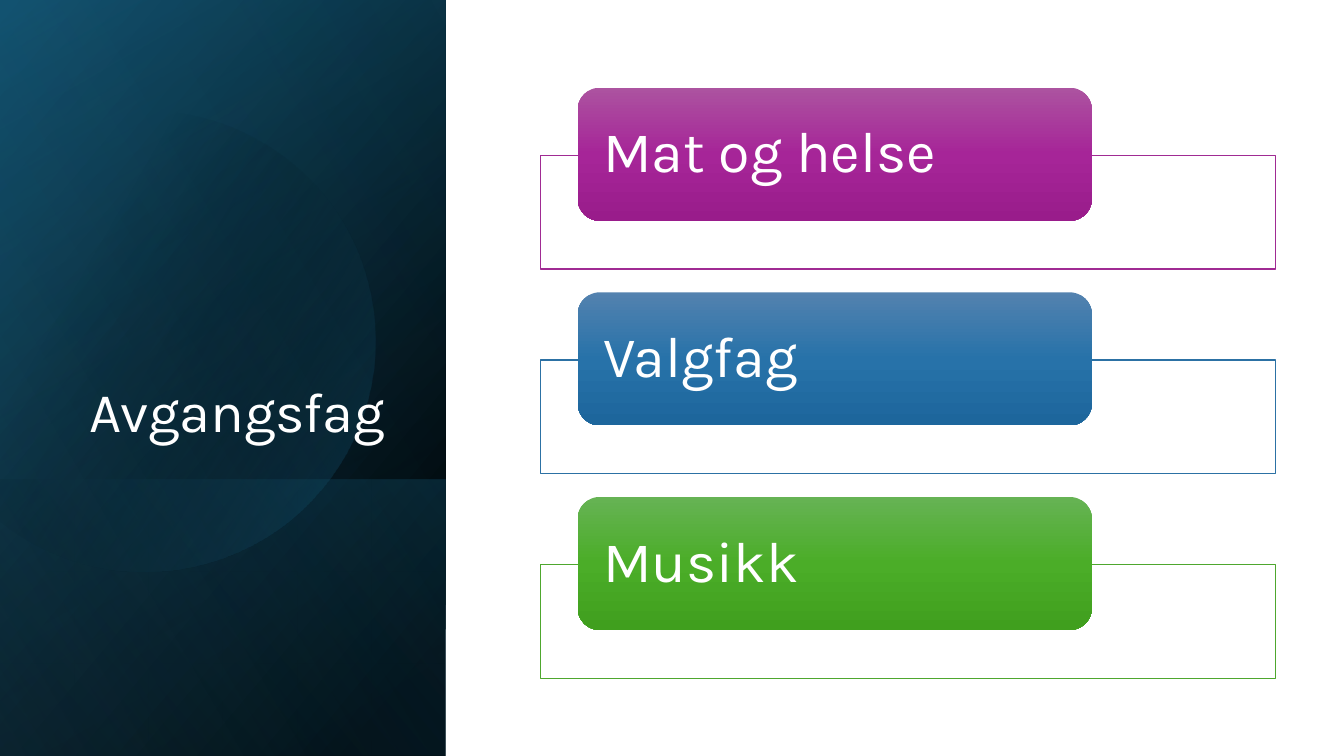
from dataclasses import dataclass

import pptx
import pptx.dml.color
import pptx.enum.shapes
import pptx.enum.text
import pptx.oxml
import pptx.oxml.ns
import pptx.util
from pptx.util import Inches

SHAPE = pptx.enum.shapes.MSO_SHAPE
ALIGN = pptx.enum.text.PP_ALIGN
ANCHOR = pptx.enum.text.MSO_ANCHOR
qn = pptx.oxml.ns.qn


@dataclass(frozen=True)
class Theme:
    font: str = "Karla"
    title_size: int = 40
    card_size: int = 41
    white: str = "FFFFFF"
    black: str = "000000"
    teal: str = "156082"
    deep_teal: str = "104862"
    sky: str = "46B1E1"


@dataclass(frozen=True)
class Stop:
    pos: int
    color: str
    alpha: int = 100


@dataclass(frozen=True)
class Panel:
    top: float
    height: float
    angle: int
    stops: tuple[Stop, ...]


@dataclass(frozen=True)
class Subject:
    name: str
    line: str
    shades: tuple[str, str, str]


THEME = Theme()
SLIDE_W, SLIDE_H, PANEL_W = 13.33, 7.5, 4.42
FRAME_TOP, CARD_TOP, PITCH = 1.54, 0.87, 2.03

BACK_PANELS = (
    Panel(0, SLIDE_H, 50, (Stop(8, THEME.black), Stop(100, THEME.deep_teal))),
    Panel(0, SLIDE_H, 30, (Stop(0, THEME.black, 0), Stop(99, THEME.teal, 46))),
    Panel(4.76, 2.74, 130, (Stop(2, THEME.teal, 29), Stop(100, THEME.black, 30))),
)
GLOW_PANEL = Panel(0, SLIDE_H, 120, (Stop(0, THEME.black, 0), Stop(99, THEME.sky, 11)))
DISC_STOPS = (Stop(29, THEME.black, 0), Stop(100, THEME.teal, 43))

# Each disc segment is a line end (one point) or a curve (three points)
DISC_START = (1.49, 1.1)
DISC_SEGMENTS = (
    ((2.46, 1.12), (3.35, 1.77), (3.63, 2.75)),
    ((3.98, 3.97), (3.28, 5.23), (2.07, 5.58)),
    ((1.31, 5.8), (0.53, 5.61), (-0.03, 5.14)),
    ((-0.15, 5.03),),
    ((-0.15, 1.75),),
    ((0, 1.61),),
    ((0.23, 1.42), (0.5, 1.28), (0.8, 1.19)),
    ((1.03, 1.13), (1.26, 1.1), (1.49, 1.1)),
)

SUBJECTS = (
    Subject("Mat og helse", "A02B93", ("AC53A0", "A62598", "991C8B")),
    Subject("Valgfag", "2C71A4", ("5382AF", "2772A9", "1D669C")),
    Subject("Musikk", "4EA72E", ("66B354", "4BAD28", "409F1E")),
)


def rgb(color: str) -> pptx.dml.color.RGBColor:
    return pptx.dml.color.RGBColor.from_string(color)


def set_gradient(sp, stops: tuple[Stop, ...], angle: int) -> None:
    """Fill with a linear gradient, angle clockwise, and no outline."""
    sp.shadow.inherit = False
    sp.line.fill.background()
    sp.fill.gradient()
    grad = sp._element.spPr.find(qn("a:gradFill"))
    marks = "".join(
        f'<a:gs pos="{s.pos * 1000}"><a:srgbClr val="{s.color}">'
        f'<a:alpha val="{s.alpha * 1000}"/></a:srgbClr></a:gs>'
        for s in stops
    )
    new = pptx.oxml.parse_xml(
        f'<a:gradFill {pptx.oxml.ns.nsdecls("a")} rotWithShape="1">'
        f'<a:gsLst>{marks}</a:gsLst>'
        f'<a:lin ang="{angle * 60000}" scaled="0"/></a:gradFill>'
    )
    grad.getparent().replace(grad, new)


def set_text(sp, text: str, size: int, align, anchor, left: float, right: float,
             margin: float) -> None:
    tf = sp.text_frame
    tf.word_wrap = True
    tf.vertical_anchor = anchor
    tf.margin_left, tf.margin_right = Inches(left), Inches(right)
    tf.margin_top = tf.margin_bottom = Inches(margin)
    p = tf.paragraphs[0]
    p.text = text
    p.alignment = align
    p.line_spacing = 0.9
    p.font.name = THEME.font
    p.font.size = pptx.util.Pt(size)
    p.font.color.rgb = rgb(THEME.white)


def add_panel(shapes, panel: Panel) -> None:
    """Add a mirrored quarter-turned rectangle at the left edge of the slide."""
    left = (PANEL_W - panel.height) / 2
    top = panel.top + (panel.height - PANEL_W) / 2
    sp = shapes.add_shape(SHAPE.RECTANGLE, Inches(left), Inches(top),
                          Inches(panel.height), Inches(PANEL_W))
    sp.rotation = 90
    sp._element.spPr.find(qn("a:xfrm")).set("flipH", "1")
    set_gradient(sp, panel.stops, panel.angle)


def add_disc(shapes, steps: int = 24) -> None:
    points = [DISC_START]
    for segment in DISC_SEGMENTS:
        if len(segment) == 1:
            points.append(segment[0])
            continue
        curve = (points[-1], *segment)
        for i in range(1, steps + 1):
            t = i / steps
            weights = ((1 - t) ** 3, 3 * t * (1 - t) ** 2, 3 * t * t * (1 - t), t ** 3)
            points.append(tuple(sum(w * c[axis] for w, c in zip(weights, curve))
                                for axis in (0, 1)))
    emu = [(Inches(x), Inches(y)) for x, y in points]
    builder = shapes.build_freeform(*emu[0])
    builder.add_line_segments(emu[1:], close=True)
    set_gradient(builder.convert_to_shape(), DISC_STOPS, 30)


def add_subject(shapes, subject: Subject, offset: float) -> None:
    # Outlined frame
    frame = shapes.add_shape(SHAPE.RECTANGLE, Inches(5.36), Inches(FRAME_TOP + offset),
                             Inches(7.29), Inches(1.13))
    frame.shadow.inherit = False
    frame.fill.solid()
    frame.fill.fore_color.rgb = rgb(THEME.white)
    color = frame._element.spPr.find(qn("a:solidFill"))[0]
    color.append(pptx.oxml.parse_xml(
        f'<a:alpha {pptx.oxml.ns.nsdecls("a")} val="90000"/>'))
    frame.line.color.rgb = rgb(subject.line)
    frame.line.width = pptx.util.Pt(1)

    # Card with the subject name
    card = shapes.add_shape(SHAPE.ROUNDED_RECTANGLE, Inches(5.73),
                            Inches(CARD_TOP + offset), Inches(5.1), Inches(1.32))
    set_gradient(card, tuple(Stop(50 * i, c) for i, c in enumerate(subject.shades)), 90)
    set_text(card, subject.name, THEME.card_size, ALIGN.LEFT, ANCHOR.MIDDLE,
             0.19, 0.19, 0)


def main() -> None:
    prs = pptx.Presentation()
    prs.slide_width, prs.slide_height = Inches(SLIDE_W), Inches(SLIDE_H)
    shapes = prs.slides.add_slide(prs.slide_layouts[6]).shapes

    # Layered dark side panel
    for panel in BACK_PANELS:
        add_panel(shapes, panel)
    add_disc(shapes)
    add_panel(shapes, GLOW_PANEL)

    # Title
    title = shapes.add_textbox(Inches(0.64), Inches(1.84), Inches(3.41), Inches(2.62))
    set_text(title, "Avgangsfag", THEME.title_size, ALIGN.RIGHT, ANCHOR.BOTTOM,
             0.1, 0.23, 0.05)

    # Subject list
    for i, subject in enumerate(SUBJECTS):
        add_subject(shapes, subject, i * PITCH)

    prs.save("out.pptx")


if __name__ == "__main__":
    main()
